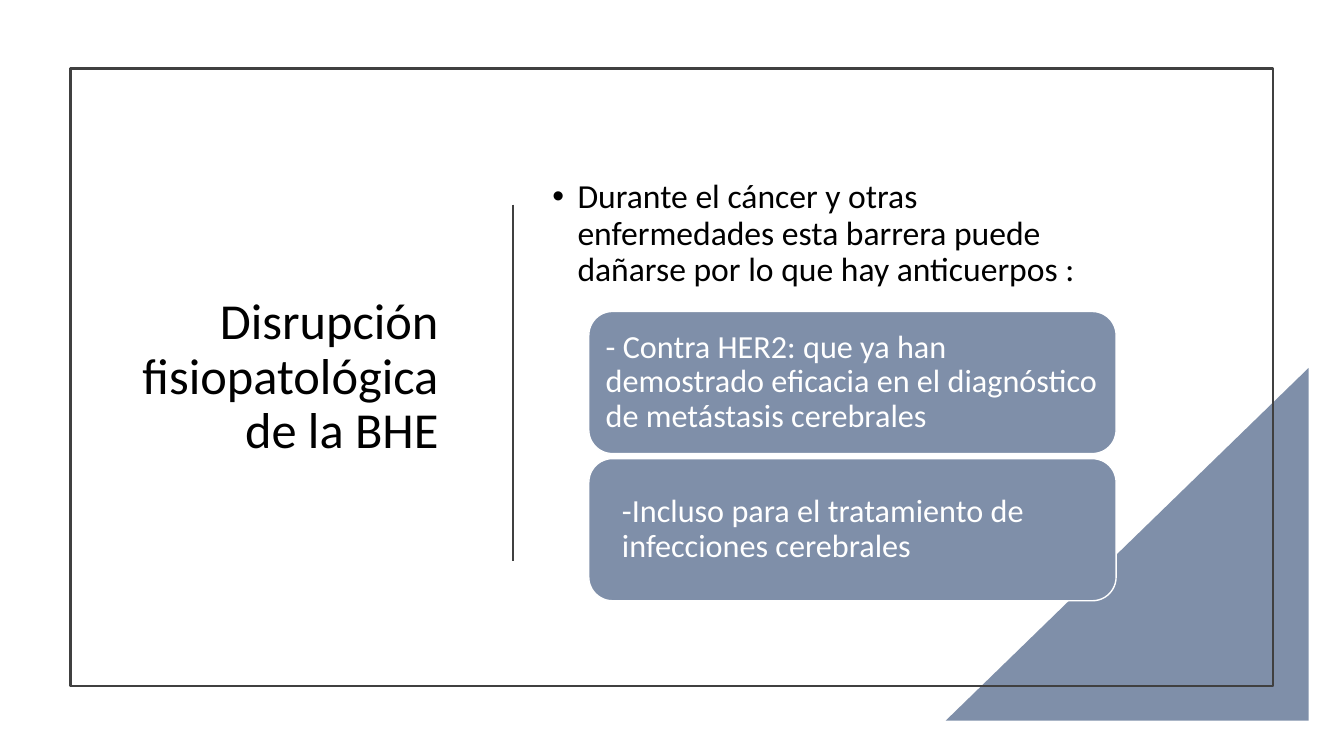
import pptx
import pptx.util
import pptx.dml.color
import pptx.enum.shapes
import pptx.enum.text
import pptx.oxml.ns
import lxml.etree

PX = 9144  # 100 px to the inch
FONT = "Calibri"
COLORS = {"slate": "7F8FA9", "rule": "404040", "ink": "000000", "paper": "FFFFFF"}
SHAPES = pptx.enum.shapes.MSO_SHAPE
ALIGN = pptx.enum.text.PP_ALIGN


def px(*lengths):
    return [pptx.util.Emu(length * PX) for length in lengths]


def rgb(name):
    return pptx.dml.color.RGBColor.from_string(COLORS[name])


def write(shape, text, size, color="ink", align=ALIGN.LEFT, insets=(10, 5, 10, 5),
          before=0, bullet_indent=0):
    """Fill a shape with one formatted paragraph; insets run left, top, right, bottom."""
    frame = shape.text_frame
    frame.word_wrap = True
    frame.auto_size = pptx.enum.text.MSO_AUTO_SIZE.NONE
    frame.vertical_anchor = pptx.enum.text.MSO_ANCHOR.MIDDLE
    (frame.margin_left, frame.margin_top,
     frame.margin_right, frame.margin_bottom) = px(*insets)
    frame.text = text
    paragraph = frame.paragraphs[0]
    paragraph.alignment = align
    paragraph.line_spacing = 0.9
    paragraph.space_before = pptx.util.Pt(before)
    font = paragraph.runs[0].font
    font.name, font.size = FONT, pptx.util.Pt(size)
    font.color.rgb = rgb(color)
    if bullet_indent:
        properties = paragraph._p.get_or_add_pPr()
        properties.set("marL", str(bullet_indent * PX))
        properties.set("indent", str(-bullet_indent * PX))
        qn = pptx.oxml.ns.qn
        lxml.etree.SubElement(properties, qn("a:buFont")).set("typeface", "Arial")
        lxml.etree.SubElement(properties, qn("a:buChar")).set("char", "•")


def add_shape(slide, kind, box, fill=None, line=None, width=1.5):
    shape = slide.shapes.add_shape(kind, *px(*box))
    shape.shadow.inherit = False
    if fill:
        shape.fill.solid()
        shape.fill.fore_color.rgb = rgb(fill)
    else:
        shape.fill.background()
    if line:
        shape.line.color.rgb = rgb(line)
        shape.line.width = pptx.util.Pt(width)
    else:
        shape.line.fill.background()
    return shape


def add_backdrop(slide, left, top, width, height):
    """Corner triangle that overhangs the outlined frame."""
    corner = add_shape(slide, SHAPES.RIGHT_TRIANGLE,
                       (left + width - 325, top + height - 316, 360, 350), fill="slate")
    corner._element.spPr.get_or_add_xfrm().set("flipH", "1")
    add_shape(slide, SHAPES.RECTANGLE, (left, top, width, height), line="rule")


def add_heading(slide, left, top, width, height):
    """Right-aligned title with a vertical divider after it."""
    title = slide.shapes.title
    title.left, title.top, title.width, title.height = px(left, top, width, height)
    write(title, "Disrupción fisiopatológica de la BHE", size=36, align=ALIGN.RIGHT)

    divider_x = left + width + 64
    divider = slide.shapes.add_connector(
        pptx.enum.shapes.MSO_CONNECTOR.STRAIGHT,
        *px(divider_x, top + 73, divider_x, top + 427))
    divider.line.color.rgb = rgb("rule")
    divider.line.width = pptx.util.Pt(1.5)
    lxml.etree.SubElement(divider._element.spPr, pptx.oxml.ns.qn("a:effectLst"))


def add_content(slide, left, top, width, height):
    """Introductory bullet above a stack of antibody cards."""
    intro = slide.shapes.add_textbox(*px(left, top, width, height))
    write(intro, "Durante el cáncer y otras enfermedades esta barrera puede "
          "dañarse por lo que hay anticuerpos :", size=24, before=10,
          bullet_indent=25, insets=(10, 5, 10, 55))

    cards = [
        ("- Contra HER2: que ya han demostrado eficacia en el diagnóstico "
         "de metástasis cerebrales", (10, 5, 10, 5)),
        ("-Incluso para el tratamiento de infecciones cerebrales", (26, 5, 32, 5)),
    ]
    card_height, gap = 141, 5
    for index, (text, insets) in enumerate(cards):
        card_top = top + 246 + index * (card_height + gap)
        card = add_shape(slide, SHAPES.ROUNDED_RECTANGLE,
                         (left + 46, card_top, 523, card_height),
                         fill="slate", line="paper", width=1)
        write(card, text, size=23, color="paper", insets=insets)


def main():
    deck = pptx.Presentation()
    deck.slide_width, deck.slide_height = px(1333, 750)
    slide = deck.slides.add_slide(deck.slide_layouts.get_by_name("Title Only"))
    add_backdrop(slide, 70, 68, 1193, 613)
    add_heading(slide, 118, 130, 327, 490)
    add_content(slide, 538, 63, 567, 389)
    deck.save("out.pptx")


if __name__ == "__main__":
    main()
